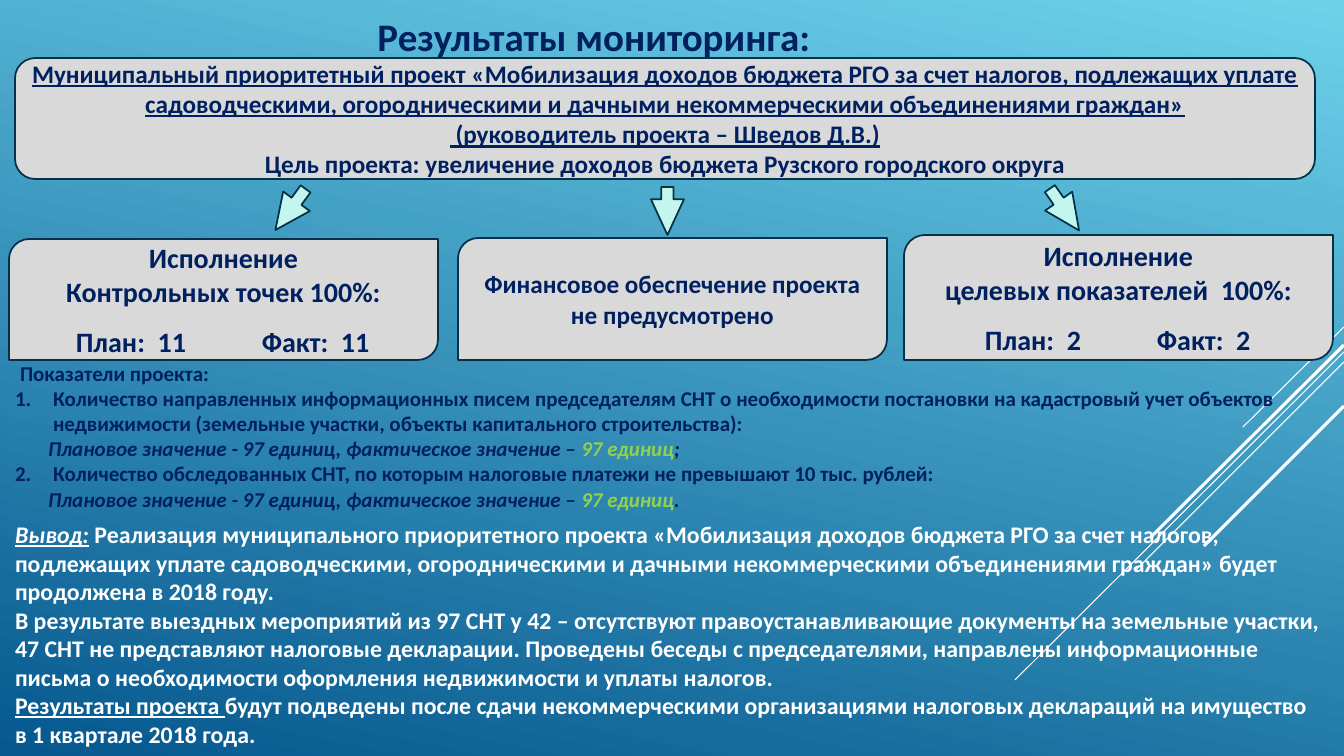
import pptx
import pptx.util
import pptx.dml.color
import pptx.enum.shapes
import pptx.enum.text
import pptx.oxml.ns
import lxml.etree

SHAPE = pptx.enum.shapes.MSO_SHAPE
ALIGN = pptx.enum.text.PP_ALIGN
ANCHOR = pptx.enum.text.MSO_ANCHOR
qn = pptx.oxml.ns.qn
PX = 12192000 / 1344  # EMU in one px
NAVY, WHITE, GREEN, OUTLINE = "002060", "FFFFFF", "92D050", "043148"


def paint(color_format, value):
    color_format.rgb = pptx.dml.color.RGBColor.from_string(value)


def write(frame, paragraphs, size, color=NAVY):
    """Each paragraph is (format values, [(text, font values), ...])."""
    frame.word_wrap = True
    frame.auto_size = pptx.enum.text.MSO_AUTO_SIZE.NONE
    for number, (layout, spans) in enumerate(paragraphs):
        para = frame.add_paragraph() if number else frame.paragraphs[0]
        base = {"space_before": pptx.util.Pt(0), "alignment": ALIGN.CENTER}
        for name, value in {**base, **layout}.items():
            setattr(para, name, value)
        for text, style in spans:
            span = para.add_run()
            span.text = text
            font = {"name": "Calibri", "size": pptx.util.Pt(size), "bold": True, "color": color, **style}
            paint(span.font.color, font.pop("color"))
            for name, value in font.items():
                setattr(span.font, name, value)


# Deck and background
deck = pptx.Presentation()
deck.slide_width, deck.slide_height = round(1344 * PX), round(756 * PX)
page = deck.slides.add_slide(deck.slide_layouts[1])
backdrop = page.background.fill
backdrop.gradient()
backdrop.gradient_angle = 258
for stop, color, position in zip(backdrop.gradient_stops, ("6ED2EB", "06588E"), (0, 1)):
    paint(stop.color, color)
    stop.position = position

# Diagonal lines at the right edge, behind the text: start y, end x, end y, weight
diagonals = [
    (327, 1243, 427, 0.75),
    (352, 1015, 680, 0.75),
    (362, 1135, 571, 0.75),
    (345, 1151, 537, 2.25),
    (406, 1204, 546, 2.25),
]
tree = page.shapes.title.element.getparent()
for layer, (start_y, end_x, end_y, weight) in enumerate(diagonals, start=2):
    ends = [round(value * PX) for value in (1344, start_y, end_x, end_y)]
    diagonal = page.shapes.add_connector(pptx.enum.shapes.MSO_CONNECTOR.STRAIGHT, *ends)
    paint(diagonal.line.color, WHITE)
    diagonal.line.width = pptx.util.Pt(weight)
    lxml.etree.SubElement(diagonal.element.spPr, qn("a:effectLst"))
    tree.insert(layer, diagonal.element)

# Title and body placeholders
title, body = page.shapes.title, page.placeholders[1]
for holder, bounds in ((title, (124, 10, 940, 52)), (body, (3, 355, 1330, 401))):
    for name, value in zip(("left", "top", "width", "height"), bounds):
        setattr(holder, name, round(value * PX))
title.text_frame.vertical_anchor = ANCHOR.MIDDLE
write(title.text_frame, [({}, [("Результаты мониторинга:", {})])], 27.8)

# Indicators and conclusions
left = {"alignment": ALIGN.LEFT}
italic = {"italic": True}
conclusion = {"size": pptx.util.Pt(17), "color": WHITE}
underlined = {**conclusion, "underline": True}


def values_line(mark):
    return (left, [("Плановое значение - 97 единиц, фактическое значение – ", italic),
                   ("97 единиц", {**italic, "color": GREEN}), (mark, italic)])


write(body.text_frame, [
    (left, [("Показатели проекта:", {})]),
    (left, [("Количество направленных информационных писем председателям СНТ о необходимости постановки "
             "на кадастровый учет объектов недвижимости (земельные участки, объекты капитального "
             "строительства):", {})]),
    values_line(";"),
    (left, [("Количество обследованных СНТ, по которым налоговые платежи не превышают 10 тыс. рублей:", {})]),
    values_line("."),
    ({**left, "space_before": pptx.util.Pt(6)}, [
        ("Вывод:", {**underlined, **italic}),
        (" Реализация муниципального приоритетного проекта «Мобилизация доходов бюджета РГО за счет "
         "налогов, подлежащих уплате садоводческими, огородническими и дачными некоммерческими "
         "объединениями граждан» будет продолжена в 2018 году.", conclusion)]),
    (left, [("В результате выездных мероприятий из 97 СНТ у 42 – отсутствуют правоустанавливающие документы "
             "на земельные участки, 47 СНТ не представляют налоговые декларации. Проведены беседы с "
             "председателями, направлены информационные письма о необходимости оформления недвижимости "
             "и уплаты налогов.", conclusion)]),
    (left, [("Результаты проекта ", underlined),
            ("будут подведены после сдачи некоммерческими организациями налоговых деклараций на имущество "
             "в 1 квартале 2018 года.", conclusion)]),
], 15)
body.text_frame.margin_left = round(12 * PX)

# Indents and numbering: margin, first-line offset, number
indents = [(5, 0, 0), (38, -38, 1), (33, 0, 0), (38, -38, 2), (33, 0, 0)] + [(0, 0, 0)] * 3
for para, (margin, offset, number) in zip(body.text_frame.paragraphs, indents):
    props = para._p.get_or_add_pPr()
    props.set("marL", str(round(margin * PX)))
    props.set("indent", str(round(offset * PX)))
    if number:
        lxml.etree.SubElement(props, qn("a:buFont"), typeface="+mj-lt")
        lxml.etree.SubElement(props, qn("a:buAutoNum"), type="arabicPeriod", startAt=str(number))
    else:
        lxml.etree.SubElement(props, qn("a:buNone"))

# Project box, three result boxes and arrows: preset, bounds, fill, rotation, text, size
line_under = {"underline": True}
gap = {**left, "space_before": pptx.util.Pt(12)}
project = [
    ({}, [("Муниципальный приоритетный проект «Мобилизация доходов бюджета РГО за счет налогов, подлежащих "
           "уплате садоводческими, огородническими и дачными некоммерческими объединениями граждан»",
           line_under)]),
    ({}, [(" (руководитель проекта – Шведов Д.В.)", line_under)]),
    ({}, [("Цель проекта: увеличение доходов бюджета Рузского городского округа", {})]),
]
checkpoints, targets = [
    [({}, [("Исполнение", {})]), ({}, [(subject, {})]), (gap, [(f"\tПлан:  {count}\tФакт:  {count}", {})])]
    for subject, count in (("Контрольных точек 100%:", 11), ("целевых показателей  100%:", 2))
]
funding = [({}, [("Финансовое обеспечение проекта не предусмотрено", {})])]
GRAY, MINT = "D9D9D9", "C3F7ED"
blocks = [
    (SHAPE.ROUNDED_RECTANGLE, (15, 58, 1300, 121), GRAY, 0, project, 18),
    (SHAPE.ROUND_2_DIAG_RECTANGLE, (9, 239, 429, 121), GRAY, 0, checkpoints, 20),
    (SHAPE.ROUND_2_DIAG_RECTANGLE, (458, 238, 429, 122), GRAY, 0, funding, 18),
    (SHAPE.ROUND_2_DIAG_RECTANGLE, (904, 235, 429, 125), GRAY, 0, targets, 20),
    (SHAPE.DOWN_ARROW, (274, 184, 33, 51), MINT, 36.3, None, 0),
    (SHAPE.DOWN_ARROW, (651, 187, 33, 48), MINT, 0, None, 0),
    (SHAPE.DOWN_ARROW, (1048, 184, 33, 51), MINT, 325.1, None, 0),
]
for preset, bounds, fill, rotation, paragraphs, size in blocks:
    box = page.shapes.add_shape(preset, *[round(value * PX) for value in bounds])
    box.shadow.inherit = False
    box.rotation = rotation
    box.fill.solid()
    paint(box.fill.fore_color, fill)
    paint(box.line.color, OUTLINE)
    box.line.width = pptx.util.Pt(1.25)
    if paragraphs:
        box.text_frame.vertical_anchor = ANCHOR.MIDDLE
        write(box.text_frame, paragraphs, size)
    else:
        box.adjustments[0], box.adjustments[1] = 0.37, 1.08
    # Tab stops of the plan and fact figures
    if paragraphs in (checkpoints, targets):
        plan_stop = 51 if paragraphs is checkpoints else 65
        stops = lxml.etree.SubElement(box.text_frame.paragraphs[-1]._p.get_or_add_pPr(), qn("a:tabLst"))
        for position in (plan_stop, 237):
            lxml.etree.SubElement(stops, qn("a:tab"), pos=str(round(position * PX)), algn="l")

deck.save("out.pptx")
